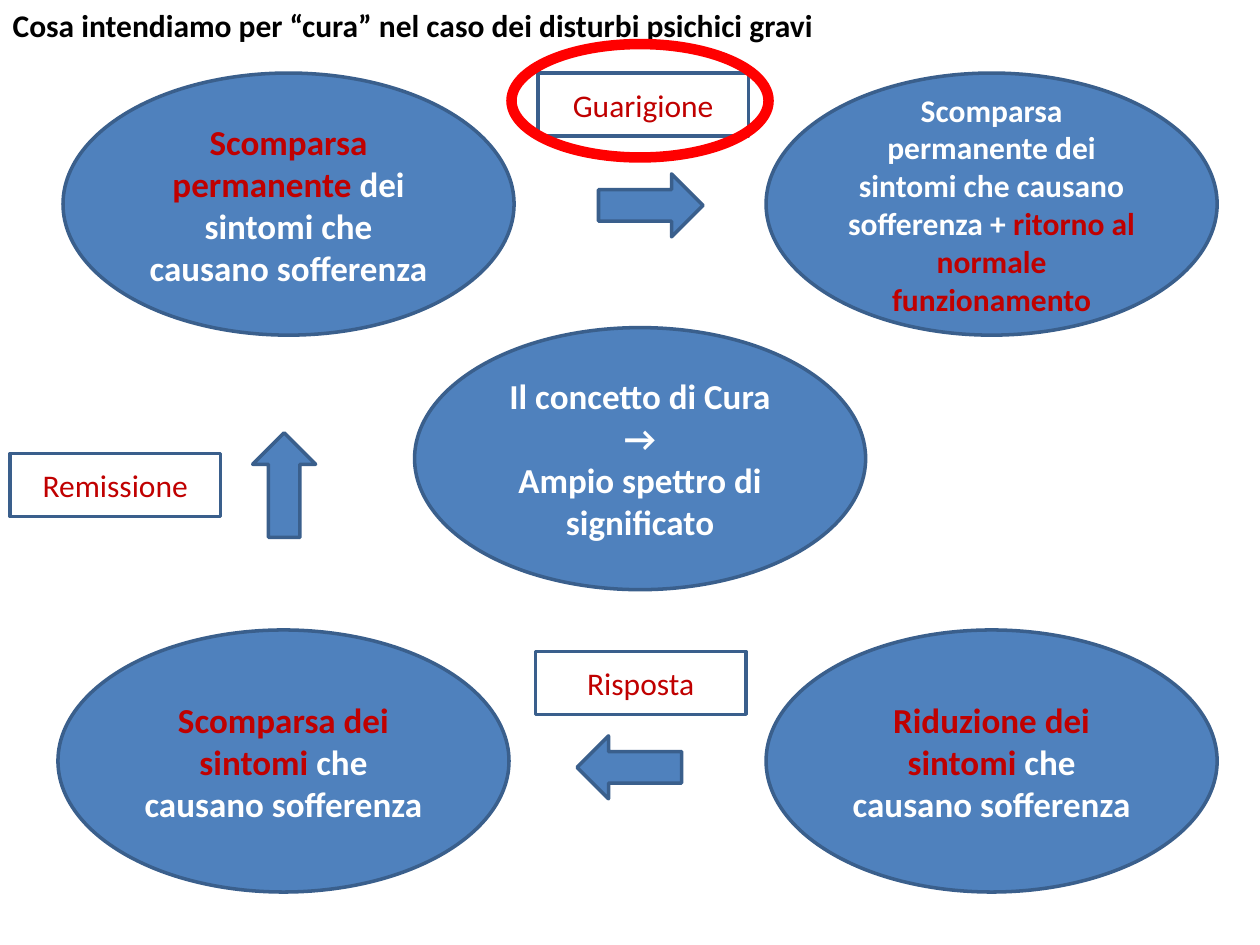
import dataclasses

import pptx
import pptx.dml.color
import pptx.enum.shapes
import pptx.enum.text
import pptx.util

Inches = pptx.util.Inches
Pt = pptx.util.Pt
RGB = pptx.dml.color.RGBColor
MSO_SHAPE = pptx.enum.shapes.MSO_SHAPE
PP_ALIGN = pptx.enum.text.PP_ALIGN
MSO_ANCHOR = pptx.enum.text.MSO_ANCHOR
MSO_AUTO_SIZE = pptx.enum.text.MSO_AUTO_SIZE


@dataclasses.dataclass(frozen=True)
class Theme:
    font: str = "Calibri"
    fill: RGB = RGB(0x4F, 0x81, 0xBD)
    line: RGB = RGB(0x3A, 0x5F, 0x8C)
    light: RGB = RGB(0xFF, 0xFF, 0xFF)
    dark: RGB = RGB(0x00, 0x00, 0x00)
    accent: RGB = RGB(0xC0, 0x00, 0x00)
    ring: RGB = RGB(0xFF, 0x00, 0x00)
    large: int = 20
    normal: int = 18
    outline: int = 2
    ring_width: int = 6


THEME = Theme()
CONCEPT_SIZE = (3.58, 2.08)
LABEL_SIZE = (1.67, 0.5)
ARROW_SIZE = (0.83, 0.5)
LEFT, RIGHT, TOP, BOTTOM = 0.5, 6.08, 0.58, 5


def format_run(r, size, color, bold):
    r.font.name = THEME.font
    r.font.size = Pt(size)
    r.font.bold = bold
    r.font.color.rgb = color


def add_outlined(slide, kind, position, size, fill=None,
                 line=THEME.line, width=THEME.outline):
    sp = slide.shapes.add_shape(kind, *map(Inches, position + size))
    sp.shadow.inherit = False
    if fill is None:
        sp.fill.background()
    else:
        sp.fill.solid()
        sp.fill.fore_color.rgb = fill
    sp.line.color.rgb = line
    sp.line.width = Pt(width)
    return sp


def write_centred(sp, paragraphs, size, bold):
    tf = sp.text_frame
    tf.word_wrap = True
    tf.vertical_anchor = MSO_ANCHOR.MIDDLE
    for i, parts in enumerate(paragraphs):
        p = tf.add_paragraph() if i else tf.paragraphs[0]
        p.alignment = PP_ALIGN.CENTER
        for text, color in parts:
            r = p.add_run()
            r.text = text
            format_run(r, size, color, bold)


def add_title(slide, text):
    sp = slide.shapes.title
    sp.left, sp.top, sp.width, sp.height = map(Inches, (0, 0, 10, 0.71))
    tf = sp.text_frame
    tf.text = text
    tf.word_wrap = True
    tf.auto_size = MSO_AUTO_SIZE.NONE
    tf.vertical_anchor = MSO_ANCHOR.TOP
    p = tf.paragraphs[0]
    p.alignment = PP_ALIGN.LEFT
    format_run(p.runs[0], THEME.normal, THEME.dark, True)


def add_concept(slide, position, paragraphs, size=THEME.large):
    sp = add_outlined(slide, MSO_SHAPE.OVAL, position, CONCEPT_SIZE, THEME.fill)
    write_centred(sp, paragraphs, size, True)


def add_label(slide, position, text):
    sp = add_outlined(slide, MSO_SHAPE.RECTANGLE, position, LABEL_SIZE)
    write_centred(sp, [[(text, THEME.accent)]], THEME.normal, False)


def add_arrow(slide, position, rotation):
    sp = add_outlined(slide, MSO_SHAPE.LEFT_ARROW, position, ARROW_SIZE, THEME.fill)
    sp.rotation = rotation


def add_ring(slide, position, size):
    add_outlined(slide, MSO_SHAPE.OVAL, position, size,
                 line=THEME.ring, width=THEME.ring_width)


def main():
    prs = pptx.Presentation()
    prs.slide_width, prs.slide_height = Inches(10), Inches(7.5)
    slide = prs.slides.add_slide(prs.slide_layouts[5])
    light, accent = THEME.light, THEME.accent

    add_title(slide, "Cosa intendiamo per “cura” nel caso dei disturbi psichici gravi")

    add_concept(slide, (3.29, 2.6), [[("Il concetto di Cura →", light)],
                                     [("Ampio spettro di significato", light)]])
    add_concept(slide, (RIGHT, BOTTOM), [[("Riduzione dei sintomi ", accent),
                                          ("che causano sofferenza", light)]])
    add_concept(slide, (0.46, BOTTOM), [[("Scomparsa dei sintomi ", accent),
                                         ("che causano sofferenza", light)]])
    add_concept(slide, (LEFT, TOP), [[("Scomparsa permanente ", accent),
                                      ("dei sintomi che causano sofferenza", light)]])
    add_concept(slide, (RIGHT, TOP),
                [[("Scomparsa permanente dei sintomi che causano sofferenza + ", light),
                  ("ritorno al normale funzionamento", accent)]], THEME.normal)

    for text, label_at, arrow_at, rotation in (
        ("Risposta", (4.25, 5.17), (4.58, 5.84), 0),
        ("Remissione", (0.08, 3.6), (1.84, 3.6), 90),
        ("Guarigione", (4.27, TOP), (4.75, 1.38), 180),
    ):
        add_label(slide, label_at, text)
        add_arrow(slide, arrow_at, rotation)

    add_ring(slide, (4.06, 0.35), (2.04, 0.9))
    prs.save("out.pptx")


if __name__ == "__main__":
    main()
